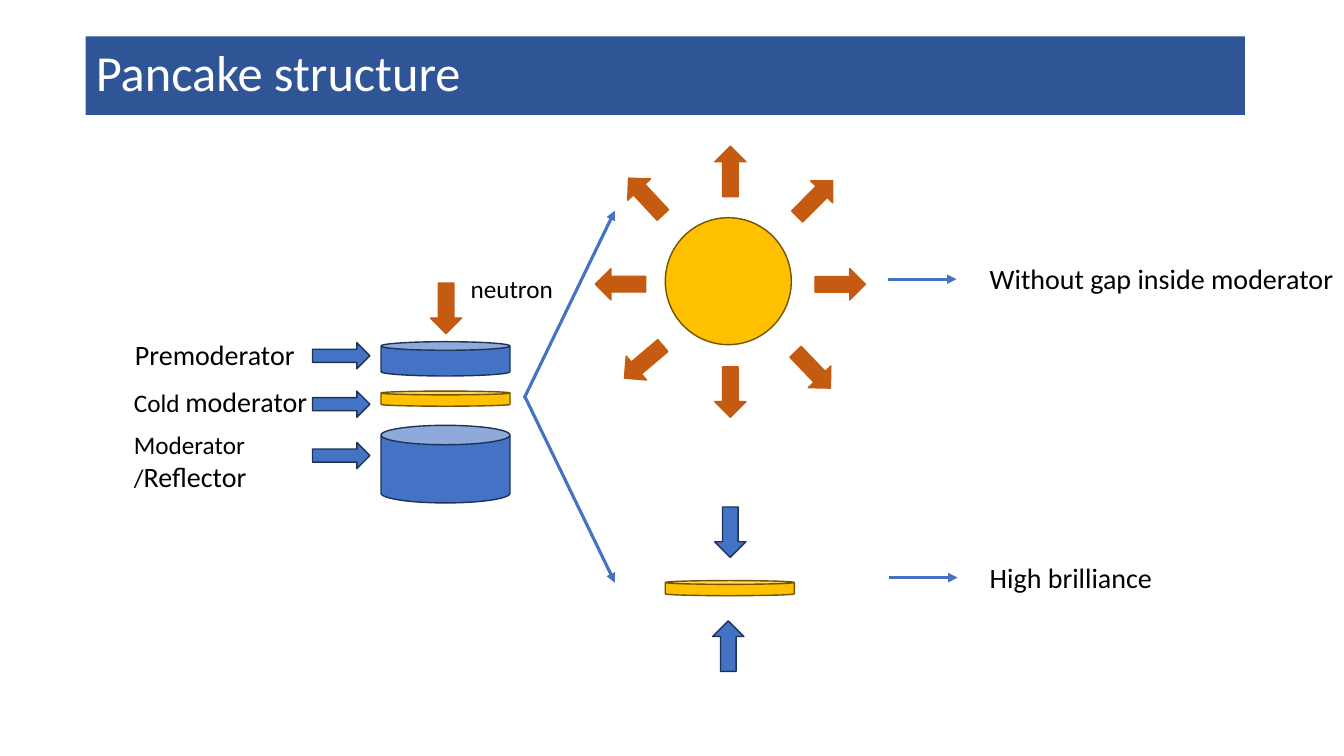
"""Build the pancake structure slide on a grid of 0.1 inch cells."""
from dataclasses import dataclass

from lxml.etree import SubElement
from pptx import Presentation
from pptx.dml.color import RGBColor
from pptx.enum.shapes import MSO_CONNECTOR, MSO_SHAPE
from pptx.enum.text import MSO_ANCHOR, MSO_AUTO_SIZE, PP_ALIGN
from pptx.oxml.ns import qn
from pptx.util import Inches, Pt


@dataclass(frozen=True)
class Theme:
    """Colours, type sizes and line widths of the slide."""
    font: str = "Calibri"
    text: str = "000000"
    title_text: str = "FFFFFF"
    title_bar: str = "2F5597"
    link: str = "4472C4"
    water: tuple = ("4472C4", "1E3256")
    cold: tuple = ("FFC000", "705400")
    neutron: tuple = ("C55A11", "C55A11")
    title_size: int = 36
    label_size: int = 20
    small_size: int = 18
    outline: float = 1
    link_width: float = 2.25


THEME = Theme()
CELL = 0.1
COLUMNS, ROWS = 133.33, 75
ARROW_WIDTH, ARROW_LENGTH = 3.1, 5
DISC_WIDTH, DISC_HEIGHT = 12.8, 1.5

LAYERS = [
    (33.9, 3.4, THEME.water),
    (38.8, DISC_HEIGHT, THEME.cold),
    (42.2, 7.7, THEME.water),
]
POINTER_ROWS = [34, 38.8, 43.9]
EMISSION = [
    (0, 70.9, 36.4), (49.7, 62.3, 33.4), (90, 60, 25.7), (137, 62.5, 17),
    (180, 70.9, 14.5), (225, 79.3, 17.2), (270, 81.8, 25.7), (316.2, 79.1, 34.2),
]
LABELS = [
    (45.7, 26.6, 15.3, 4, [("neutron", THEME.small_size)]),
    (12.4, 33, 18.1, 4.4, [("Premoderator", THEME.label_size)]),
    (12.3, 37.7, 20.4, 4.4,
     [("Cold ", THEME.small_size), ("moderator", THEME.label_size)]),
    (12.3, 42.1, 19.2, 7.4,
     [("Moderator /", THEME.small_size), ("Reflector", THEME.label_size)]),
    (97.2, 25.5, 44.1, 4.4, [("Without gap inside moderator", THEME.label_size)]),
    (97.2, 55.1, 31.3, 4.4, [("High brilliance", THEME.label_size)]),
]
LINKS = [
    ((52, 39.5), (61, 20.9)),
    ((52.1, 39.4), (61, 57.8)),
    ((88.1, 27.7), (94.9, 27.7)),
    ((88.2, 57.3), (95, 57.3)),
]


def cells(*counts):
    """Turn grid counts into lengths."""
    return [Inches(count * CELL) for count in counts]


def format_run(run, size, colour):
    """Give a run its font, size and colour."""
    run.font.name = THEME.font
    run.font.size = Pt(size)
    run.font.color.rgb = RGBColor.from_string(colour)


def add_title(slide, wording):
    """Format the title placeholder as a filled bar."""
    title = slide.shapes.title
    title.left, title.top, title.width, title.height = cells(8.5, 3.6, 115, 7.8)
    title.fill.solid()
    title.fill.fore_color.rgb = RGBColor.from_string(THEME.title_bar)
    frame = title.text_frame
    frame.text = wording
    frame.auto_size = MSO_AUTO_SIZE.NONE
    frame.vertical_anchor = MSO_ANCHOR.MIDDLE
    heading = frame.paragraphs[0]
    heading.alignment = PP_ALIGN.LEFT
    heading.line_spacing = 0.9
    format_run(heading.runs[0], THEME.title_size, THEME.title_text)


def add_solid(slide, preset, left, top, width, height, colours, turn=0):
    """Add a filled and outlined preset shape."""
    solid = slide.shapes.add_shape(preset, *cells(left, top, width, height))
    fill, outline = colours
    solid.fill.solid()
    solid.fill.fore_color.rgb = RGBColor.from_string(fill)
    solid.line.color.rgb = RGBColor.from_string(outline)
    solid.line.width = Pt(THEME.outline)
    solid.shadow.inherit = False
    solid.rotation = turn


def add_arrow(slide, left, top, colours, turn=0):
    """Add a block arrow that points down before it is turned."""
    add_solid(slide, MSO_SHAPE.DOWN_ARROW, left, top,
              ARROW_WIDTH, ARROW_LENGTH, colours, turn)


def add_label(slide, left, top, width, height, pieces):
    """Add a label made of pieces of text with their own sizes."""
    label = slide.shapes.add_textbox(*cells(left, top, width, height))
    frame = label.text_frame
    frame.word_wrap = True
    frame.auto_size = MSO_AUTO_SIZE.SHAPE_TO_FIT_TEXT
    for wording, size in pieces:
        run = frame.paragraphs[0].add_run()
        run.text = wording
        format_run(run, size, THEME.text)


def add_link(slide, start, end):
    """Add a thin line with an arrowhead at its end."""
    link = slide.shapes.add_connector(MSO_CONNECTOR.STRAIGHT, *cells(*start, *end))
    link.line.color.rgb = RGBColor.from_string(THEME.link)
    link.line.width = Pt(THEME.link_width)
    SubElement(link.line._get_or_add_ln(), qn("a:tailEnd"), type="triangle")
    SubElement(link._element.spPr, qn("a:effectLst"))


def main():
    """Build and save the slide."""
    deck = Presentation()
    deck.slide_width, deck.slide_height = cells(COLUMNS, ROWS)
    slide = deck.slides.add_slide(deck.slide_layouts[5])
    add_title(slide, "Pancake structure")

    for top, height, colours in LAYERS:
        add_solid(slide, MSO_SHAPE.CAN, 37.8, top, DISC_WIDTH, height, colours)
    for top in POINTER_ROWS:
        add_solid(slide, MSO_SHAPE.RIGHT_ARROW, 31, top, 5.7, 2.6, THEME.water)
    add_arrow(slide, 42.7, 28.1, THEME.neutron)

    add_solid(slide, MSO_SHAPE.OVAL, 66, 21.6, 12.5, 12.6, THEME.cold)
    for turn, left, top in EMISSION:
        add_arrow(slide, left, top, THEME.neutron, turn)

    add_solid(slide, MSO_SHAPE.CAN, 66, 57.6, DISC_WIDTH, DISC_HEIGHT, THEME.cold)
    add_arrow(slide, 70.9, 50.3, THEME.water)
    add_arrow(slide, 70.7, 61.6, THEME.water, 180)

    for start, end in LINKS:
        add_link(slide, start, end)
    for label in LABELS:
        add_label(slide, *label)
    deck.save("out.pptx")


if __name__ == "__main__":
    main()
